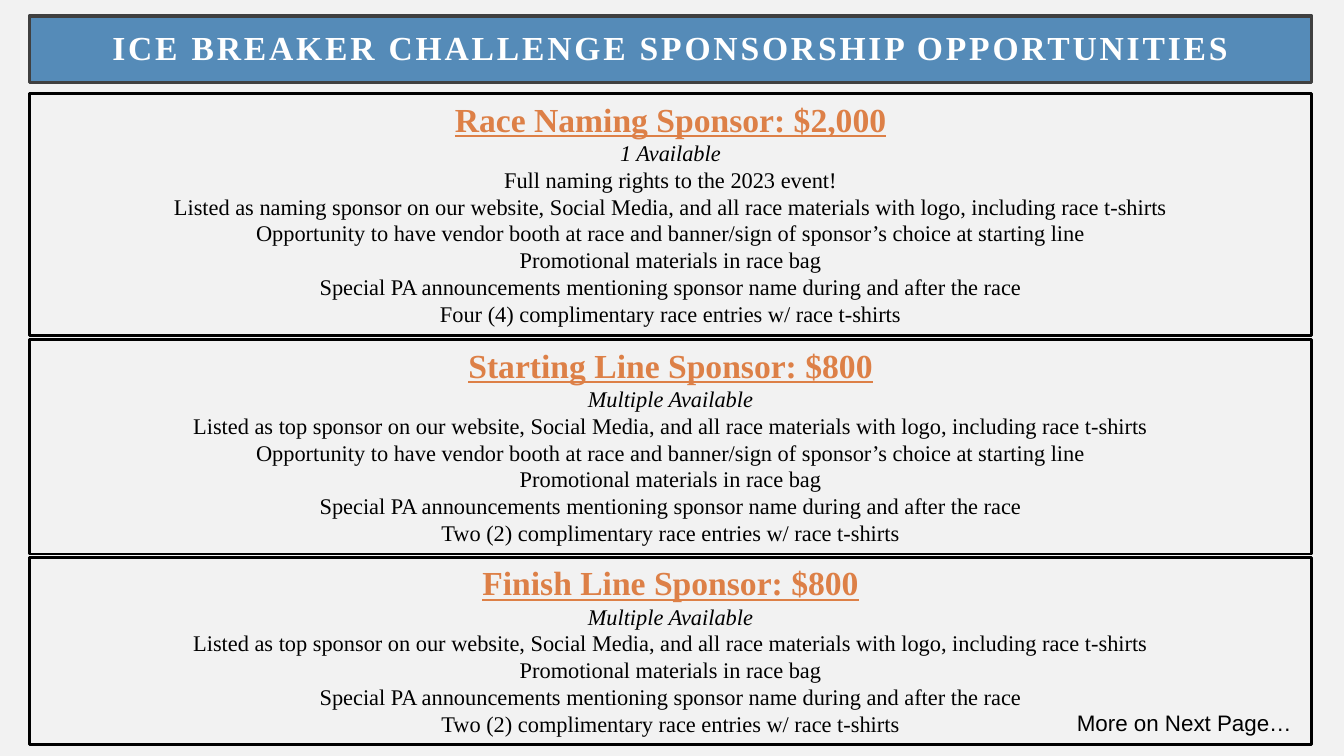
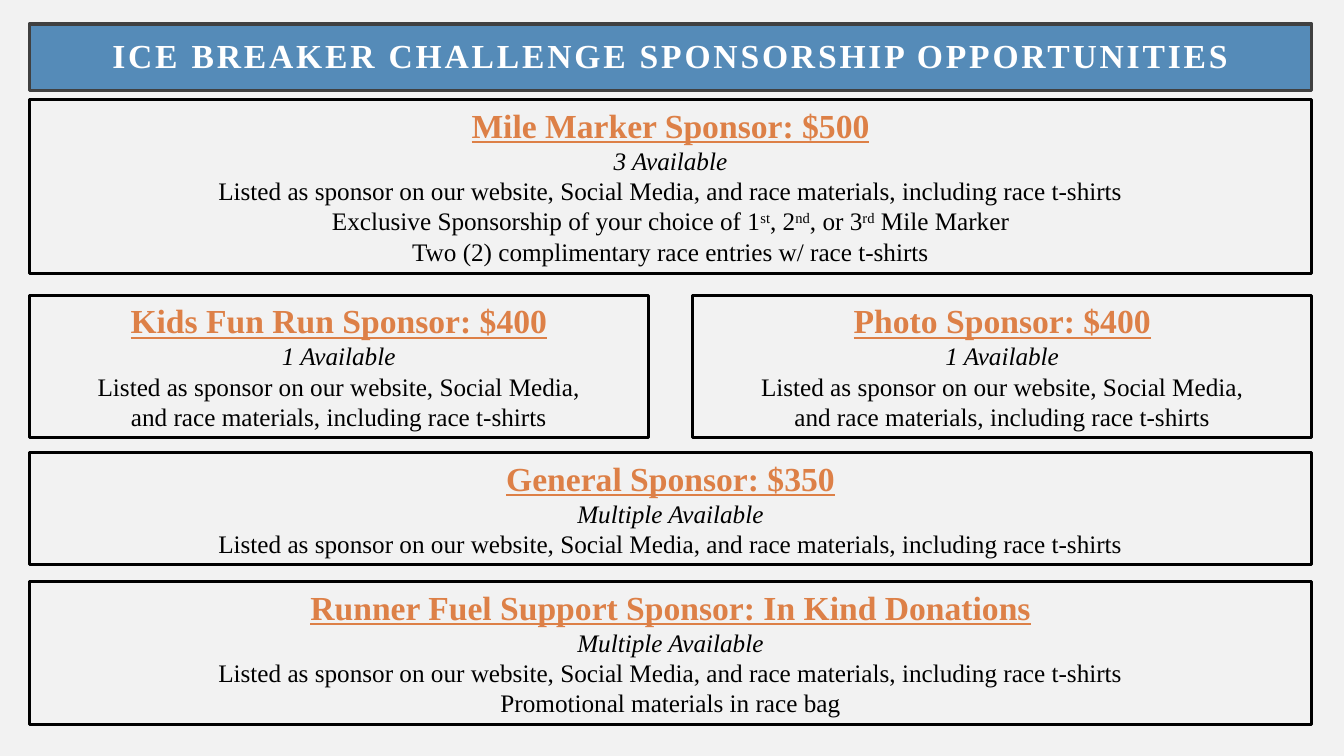
from pptx import Presentation
from pptx import util as u
from pptx.dml.color import RGBColor
from pptx.enum import shapes, text

LEFT, WIDTH, GUTTER = 0.29, 12.72, 0.44
COLORS = dict(back="F2F2F2", band="558BB8", edge="404040", ink="000000",
              accent="DD8047", white="FFFFFF")
SERIF = "Times New Roman"
HEADING = dict(name=SERIF, size=u.Pt(24), bold=True)
TITLE = "ICE BREAKER CHALLENGE SPONSORSHIP OPPORTUNITIES"

LISTED = "Listed as sponsor on our website, Social Media, and race materials, including race t-shirts"
LISTED_HALVES = ["Listed as sponsor on our website, Social Media,",
                 "and race materials, including race t-shirts"]
LISTED_TOP = "Listed as top sponsor on our website, Social Media, and all race materials with logo, including race t-shirts"
BOOTH = "Opportunity to have vendor booth at race and banner/sign of sponsor’s choice at starting line"
PROMO = "Promotional materials in race bag"
SPECIAL = "Special PA announcements mentioning sponsor name during and after the race"
TWO_ENTRIES = "Two (2) complimentary race entries w/ race t-shirts"

MAJOR = [
    (0.93, 0, 1, "Race Naming Sponsor: $2,000", "1 Available", [
        "Full naming rights to the 2023 event!",
        "Listed as naming sponsor on our website, Social Media, and all race materials with logo, including race t-shirts",
        BOOTH, PROMO, SPECIAL,
        "Four (4) complimentary race entries w/ race t-shirts"]),
    (3.37, 0, 1, "Starting Line Sponsor: $800", "Multiple Available",
     [LISTED_TOP, BOOTH, PROMO, SPECIAL, TWO_ENTRIES]),
    (5.53, 0, 1, "Finish Line Sponsor: $800", "Multiple Available",
     [LISTED_TOP, PROMO, SPECIAL, TWO_ENTRIES]),
]
MINOR = [
    (0.99, 0, 1, "Mile Marker Sponsor: $500", "3 Available",
     [LISTED, "Exclusive Sponsorship of your choice of 1^st^, 2^nd^, or 3^rd^ Mile Marker",
      TWO_ENTRIES]),
    (2.93, 0, 2, "Kids Fun Run Sponsor: $400", "1 Available", LISTED_HALVES),
    (2.93, 1, 2, "Photo Sponsor: $400", "1 Available", LISTED_HALVES),
    (4.49, 0, 1, "General Sponsor: $350", "Multiple Available", [LISTED]),
    (5.77, 0, 1, "Runner Fuel Support Sponsor: In Kind Donations", "Multiple Available",
     [LISTED, PROMO]),
]


def rgb(value):
    return RGBColor.from_string(value)


def apply(target, formats):
    for key, value in formats.items():
        setattr(target, key, value)


def add_paragraph(tf, content, color, font, align=text.PP_ALIGN.CENTER):
    p = tf.paragraphs[0] if not tf.paragraphs[0].runs else tf.add_paragraph()
    p.alignment = align
    for i, part in enumerate(content.split("^")):
        r = p.add_run()
        r.text = part
        apply(r.font, font)
        r.font.color.rgb = rgb(color)
        if i % 2:
            r.font._element.set("baseline", "30000")
    return p


def add_box(s, left, top, width, height, line, weight, fill=None):
    sp = s.shapes.add_shape(shapes.MSO_SHAPE.RECTANGLE,
                            *map(u.Inches, (left, top, width, height)))
    sp.shadow.inherit = False
    if fill:
        sp.fill.solid()
        sp.fill.fore_color.rgb = rgb(fill)
    else:
        sp.fill.background()
    sp.line.color.rgb = rgb(line)
    sp.line.width = u.Pt(weight)
    sp.text_frame.word_wrap = True
    return sp


def add_title(s, top):
    sp = add_box(s, LEFT, top, WIDTH, 0.66, COLORS["edge"], 2.5, COLORS["band"])
    tf = sp.text_frame
    sides = ("left", "top", "right", "bottom")
    apply(tf, {f"margin_{side}": u.Inches(0.2) for side in sides})
    tf.vertical_anchor = text.MSO_ANCHOR.MIDDLE
    p = add_paragraph(tf, TITLE, COLORS["white"], HEADING)
    p.line_spacing = 0.9
    p.runs[0].font._element.set("spc", "200")


def add_sponsor(s, size, top, col, cols, name, available, benefits):
    width = (WIDTH - GUTTER * (cols - 1)) / cols
    height = 0.5 + 1.22 * size / 72 * (len(benefits) + 1)
    sp = add_box(s, LEFT + col * (width + GUTTER), top, width, height, COLORS["ink"], 2)
    tf = sp.text_frame
    apply(tf, dict(vertical_anchor=text.MSO_ANCHOR.TOP,
                   auto_size=text.MSO_AUTO_SIZE.SHAPE_TO_FIT_TEXT))
    body = dict(name=SERIF, size=u.Pt(size))
    add_paragraph(tf, name, COLORS["accent"], HEADING | dict(underline=True))
    add_paragraph(tf, available, COLORS["ink"], body | dict(italic=True))
    for benefit in benefits:
        add_paragraph(tf, benefit, COLORS["ink"], body)


def add_note(s, content):
    sp = s.shapes.add_textbox(*map(u.Inches, (10.3, 6.99, 2.61, 0.37)))
    sp.text_frame.word_wrap = True
    add_paragraph(sp.text_frame, content, COLORS["ink"],
                  dict(name="Arial", size=u.Pt(16)), text.PP_ALIGN.RIGHT)


def add_page(prs, title_top, size, sponsors):
    s = prs.slides.add_slide(prs.slide_layouts[6])
    s.background.fill.solid()
    s.background.fill.fore_color.rgb = rgb(COLORS["back"])
    add_title(s, title_top)
    for sponsor in sponsors:
        add_sponsor(s, size, *sponsor)
    return s


def main():
    prs = Presentation()
    apply(prs, dict(slide_width=u.Inches(13.33), slide_height=u.Inches(7.5)))
    s = add_page(prs, 0.16, 16, MAJOR)
    add_note(s, "More on Next Page…")
    add_page(prs, 0.24, 18, MINOR)
    prs.save("out.pptx")


if __name__ == "__main__":
    main()
